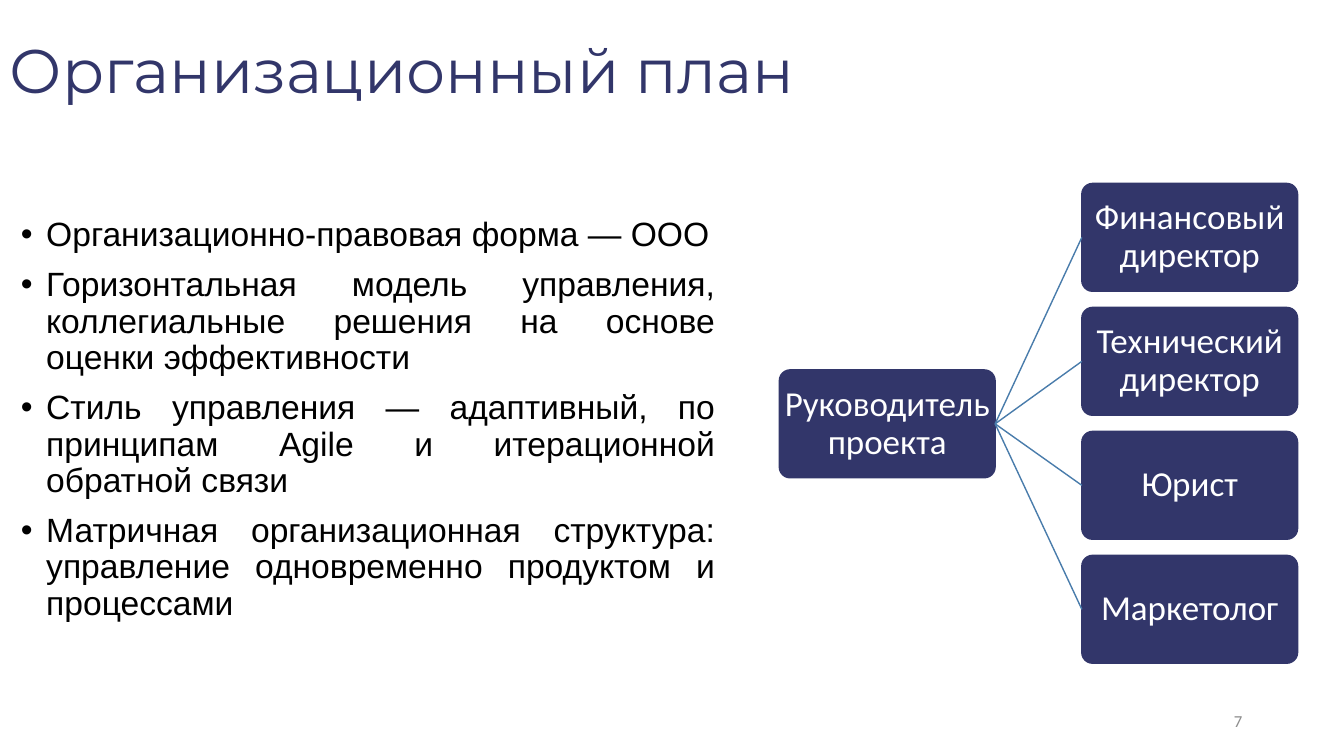
from dataclasses import dataclass

from lxml.etree import SubElement
from pptx import Presentation
from pptx.dml.color import RGBColor
from pptx.enum.shapes import MSO_CONNECTOR, MSO_SHAPE
from pptx.enum.text import MSO_ANCHOR, PP_ALIGN
from pptx.oxml.ns import qn
from pptx.util import Inches, Pt


@dataclass(frozen=True)
class Theme:
    navy: RGBColor = RGBColor.from_string("32366A")
    link: RGBColor = RGBColor.from_string("497CAB")
    black: RGBColor = RGBColor.from_string("000000")
    white: RGBColor = RGBColor.from_string("FFFFFF")
    gray: RGBColor = RGBColor.from_string("8C8C8C")
    title_size: Pt = Pt(44)
    body_size: Pt = Pt(24)
    role_size: Pt = Pt(25)
    number_size: Pt = Pt(12)


theme = Theme()


def write_text(box, lines, font_name, size, color, frame_format, paragraph_format, bullet=False):
    frame = box.text_frame
    frame.word_wrap = True
    for name, value in frame_format.items():
        setattr(frame, name, value)
    for index, line in enumerate(lines):
        para = frame.paragraphs[0] if index == 0 else frame.add_paragraph()
        for name, value in paragraph_format.items():
            setattr(para, name, value)
        if index == 0:
            para.space_before = Pt(0)
        if bullet:
            properties = para._p.get_or_add_pPr()
            properties.set("marL", str(Inches(0.25)))
            properties.set("indent", str(Inches(-0.25)))
            SubElement(properties, qn("a:buFont")).set("typeface", "Arial")
            SubElement(properties, qn("a:buChar")).set("char", "•")
        span = para.add_run()
        span.text = line
        for name, value in {"name": font_name, "size": size}.items():
            setattr(span.font, name, value)
        span.font.color.rgb = color


def add_role(shapes, left, top, label):
    box = shapes.add_shape(
        MSO_SHAPE.ROUNDED_RECTANGLE, Inches(left), Inches(top), Inches(2.14), Inches(1.07)
    )
    box.adjustments[0] = 0.1
    box.shadow.inherit = False
    box.fill.solid()
    box.fill.fore_color.rgb = theme.navy
    box.line.color.rgb = theme.navy
    box.line.width = Pt(1)
    margins = {f"margin_{side}": Inches(0.01) for side in ("left", "top", "right", "bottom")}
    write_text(
        box, [label], "Calibri", theme.role_size, theme.white,
        {"vertical_anchor": MSO_ANCHOR.MIDDLE, **margins},
        {"alignment": PP_ALIGN.CENTER, "line_spacing": 0.9},
    )
    return box


deck = Presentation()
deck.slide_width = Inches(13.33)
deck.slide_height = Inches(7.5)
page = deck.slides.add_slide(deck.slide_layouts[6])

title = page.shapes.add_textbox(Inches(0), Inches(0), Inches(13.33), Inches(1.45))
write_text(
    title, ["Организационный план"], "Montserrat", theme.title_size, theme.navy,
    {"vertical_anchor": MSO_ANCHOR.MIDDLE}, {"line_spacing": 0.9},
)

points = [
    "Организационно-правовая форма — ООО",
    "Горизонтальная модель управления, коллегиальные решения на основе оценки эффективности",
    "Стиль управления — адаптивный, по принципам Agile и итерационной обратной связи",
    "Матричная организационная структура: управление одновременно продуктом и процессами",
]
body = page.shapes.add_textbox(Inches(0.11), Inches(2.11), Inches(7.08), Inches(4.18))
write_text(
    body, points, "Arial", theme.body_size, theme.black,
    {"vertical_anchor": MSO_ANCHOR.TOP},
    {"alignment": PP_ALIGN.JUSTIFY, "line_spacing": 0.9, "space_before": Pt(10)},
    bullet=True,
)

leader = add_role(page.shapes, 7.73, 3.67, "Руководитель проекта")
roles = ["Финансовый директор", "Технический директор", "Юрист", "Маркетолог"]
for row, label in enumerate(roles):
    role = add_role(page.shapes, 10.73, 1.82 + row * 1.23, label)
    link = page.shapes.add_connector(MSO_CONNECTOR.STRAIGHT, 0, 0, 0, 0)
    link.begin_connect(leader, 3)
    link.end_connect(role, 1)
    link.line.color.rgb = theme.link
    link.line.width = Pt(1)
    SubElement(link._element.spPr, qn("a:effectLst"))

number = page.shapes.add_textbox(Inches(9.42), Inches(6.95), Inches(3), Inches(0.4))
write_text(
    number, ["7"], "Calibri", theme.number_size, theme.gray,
    {"vertical_anchor": MSO_ANCHOR.MIDDLE}, {"alignment": PP_ALIGN.RIGHT},
)

deck.save("out.pptx")
